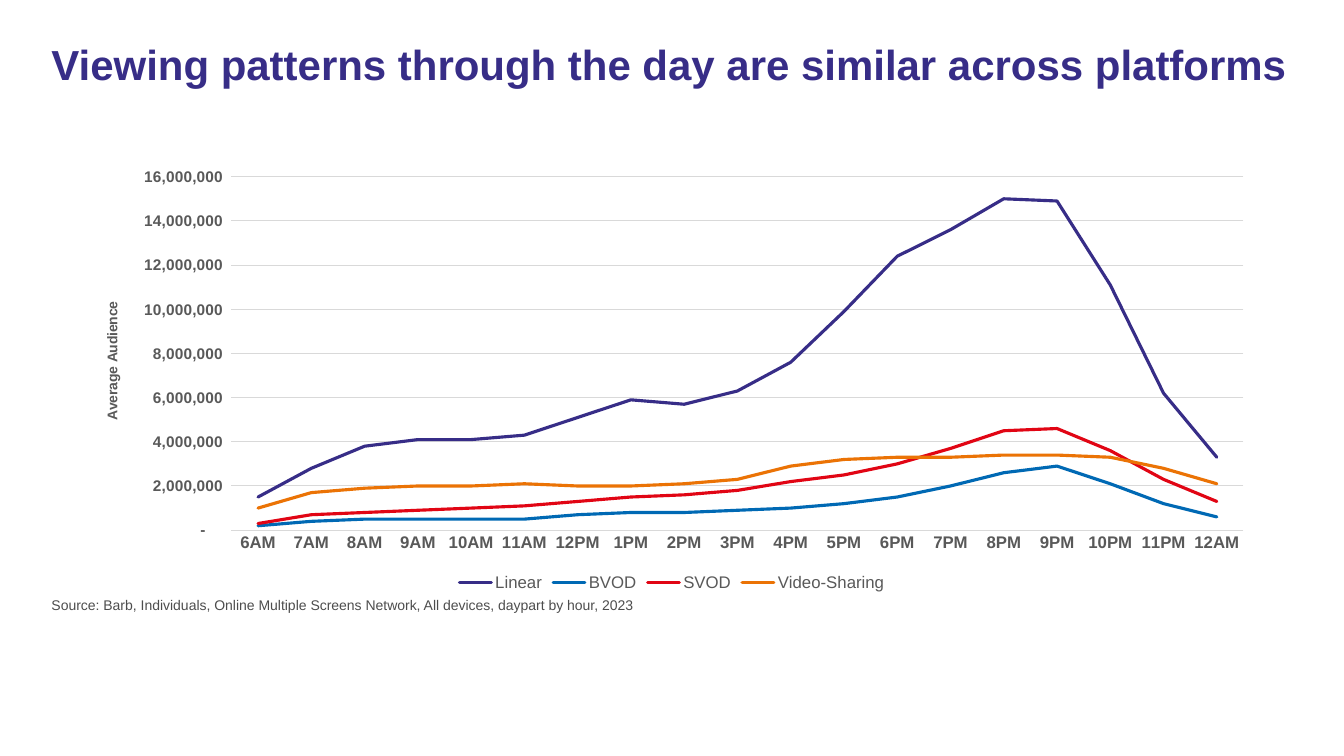
from dataclasses import dataclass

from lxml import etree
from pptx import Presentation
from pptx.chart.data import CategoryChartData
from pptx.dml.color import RGBColor
from pptx.enum.chart import XL_CHART_TYPE, XL_LEGEND_POSITION, XL_TICK_MARK
from pptx.enum.text import MSO_ANCHOR, MSO_AUTO_SIZE, PP_ALIGN
from pptx.oxml.ns import qn
from pptx.util import Inches, Pt

LINE = XL_CHART_TYPE.LINE
BOTTOM = XL_LEGEND_POSITION.BOTTOM
NO_TICK = XL_TICK_MARK.NONE
TOP = MSO_ANCHOR.TOP
NO_FIT = MSO_AUTO_SIZE.NONE
LEFT = PP_ALIGN.LEFT

WIDE, HIGH = Inches(13.333), Inches(7.5)


@dataclass(frozen=True)
class Theme:
    face: str = "Arial"
    navy: str = "372D87"
    blue: str = "0069B4"
    red: str = "E10514"
    orange: str = "EB7305"
    note: str = "4D4D4D"
    label: str = "595959"
    rule: str = "D9D9D9"
    head_size: int = 30
    label_size: int = 12
    scale_size: int = 11
    small_size: int = 10
    curve_width: float = 2.25
    rule_width: float = 0.75


THEME = Theme()

HOURS = ([f"{h}AM" for h in range(6, 12)] + ["12PM"]
         + [f"{h}PM" for h in range(1, 12)] + ["12AM"])

# Average audience in units of 100,000
CURVES = [
    ("Linear", THEME.navy, [15, 28, 38, 41, 41, 43, 51, 59, 57, 63,
                            76, 99, 124, 136, 150, 149, 111, 62, 33]),
    ("BVOD", THEME.blue, [2, 4, 5, 5, 5, 5, 7, 8, 8, 9,
                          10, 12, 15, 20, 26, 29, 21, 12, 6]),
    ("SVOD", THEME.red, [3, 7, 8, 9, 10, 11, 13, 15, 16, 18,
                         22, 25, 30, 37, 45, 46, 36, 23, 13]),
    ("Video-Sharing", THEME.orange, [10, 17, 19, 20, 20, 21, 20, 20, 21, 23,
                                     29, 32, 33, 33, 34, 34, 33, 28, 21]),
]
UNIT = 100_000


def area(left, top, width, height):
    """Turn percentages of the slide's width and height into lengths."""
    return (int(WIDE * left / 100), int(HIGH * top / 100),
            int(WIDE * width / 100), int(HIGH * height / 100))


def style(font, size, color, bold=False):
    font.name = THEME.face
    font.size = Pt(size)
    font.bold = bold
    font.color.rgb = RGBColor.from_string(color)


def stroke(line, color, width):
    line.color.rgb = RGBColor.from_string(color)
    line.width = Pt(width)


def fill_holder(holder, box, text, size, color, bold=False, pitch=1.0):
    """Move a placeholder and give it one plain, unbulleted paragraph."""
    holder.left, holder.top, holder.width, holder.height = area(*box)
    frame = holder.text_frame
    frame.word_wrap = True
    frame.auto_size = NO_FIT
    frame.vertical_anchor = TOP
    para = frame.paragraphs[0]
    props = para._p.get_or_add_pPr()
    props.set("marL", "0")
    props.set("indent", "0")
    etree.SubElement(props, qn("a:buNone"))
    para.alignment = LEFT
    para.line_spacing = pitch
    para.space_before = Pt(0)
    run = para.add_run()
    run.text = text
    style(run.font, size, color, bold)


def pin(parent, index, **shares):
    """Fix a chart part's place, in shares of the chart's size."""
    for old in parent.findall(qn("c:layout")):
        parent.remove(old)
    layout = etree.Element(qn("c:layout"))
    manual = etree.SubElement(layout, qn("c:manualLayout"))
    if "w" in shares:
        etree.SubElement(manual, qn("c:layoutTarget")).set("val", "inner")
    for name in ("xMode", "yMode"):
        etree.SubElement(manual, qn("c:" + name)).set("val", "edge")
    for name, share in shares.items():
        etree.SubElement(manual, qn("c:" + name)).set("val", str(share))
    parent.insert(index, layout)


def set_axis(axis, size):
    axis.major_tick_mark = NO_TICK
    axis.minor_tick_mark = NO_TICK
    style(axis.tick_labels.font, size, THEME.label, True)


def set_scale(axis):
    set_axis(axis, THEME.scale_size)
    axis.minimum_scale = 0
    axis.maximum_scale = 16_000_000
    axis.major_unit = 2_000_000
    axis.format.line.fill.background()
    stroke(axis.major_gridlines.format.line, THEME.rule, THEME.rule_width)
    axis.tick_labels.number_format = r'_-* #,##0_-;\-* #,##0_-;_-* "-"??_-;_-@_'
    axis.tick_labels.number_format_is_linked = False
    run = axis.axis_title.text_frame.paragraphs[0].add_run()
    run.text = "Average Audience"
    style(run.font, THEME.small_size, THEME.label, True)
    pin(axis.axis_title._element, 1, x=0.02, y=0.32)


def add_curves(slide, box):
    data = CategoryChartData()
    data.categories = HOURS
    for name, _, counts in CURVES:
        data.add_series(name, [count * UNIT for count in counts])
    chart = slide.shapes.add_chart(LINE, *area(*box), data).chart
    chart.has_title = False
    style(chart.font, THEME.small_size, THEME.label)

    for curve, (_, color, _) in zip(chart.plots[0].series, CURVES):
        curve.smooth = False
        line = curve.format.line
        stroke(line, color, THEME.curve_width)
        curve._element.spPr.find(qn("a:ln")).set("cap", "rnd")

    set_axis(chart.category_axis, THEME.label_size)
    stroke(chart.category_axis.format.line, THEME.rule, THEME.rule_width)
    set_scale(chart.value_axis)
    pin(chart._chartSpace.chart.plotArea, 0, x=0.13, y=0.04, w=0.85, h=0.81)

    chart.has_legend = True
    chart.legend.position = BOTTOM
    chart.legend.include_in_layout = False
    style(chart.legend.font, THEME.label_size, THEME.label)


def main():
    deck = Presentation()
    deck.slide_width, deck.slide_height = WIDE, HIGH
    slide = deck.slides.add_slide(deck.slide_layouts[1])
    fill_holder(slide.shapes.title, (3.08, 5.2, 93.9, 14.93),
                "Viewing patterns through the day are similar across platforms",
                THEME.head_size, THEME.navy, bold=True, pitch=0.9)
    fill_holder(slide.placeholders[1], (3.08, 78.27, 93, 4.4),
                "Source: Barb, Individuals, Online Multiple Screens Network, "
                "All devices, daypart by hour, 2023",
                THEME.small_size, THEME.note)
    add_curves(slide, (5.7, 21.07, 88.6, 57.73))
    deck.save("out.pptx")


if __name__ == "__main__":
    main()
